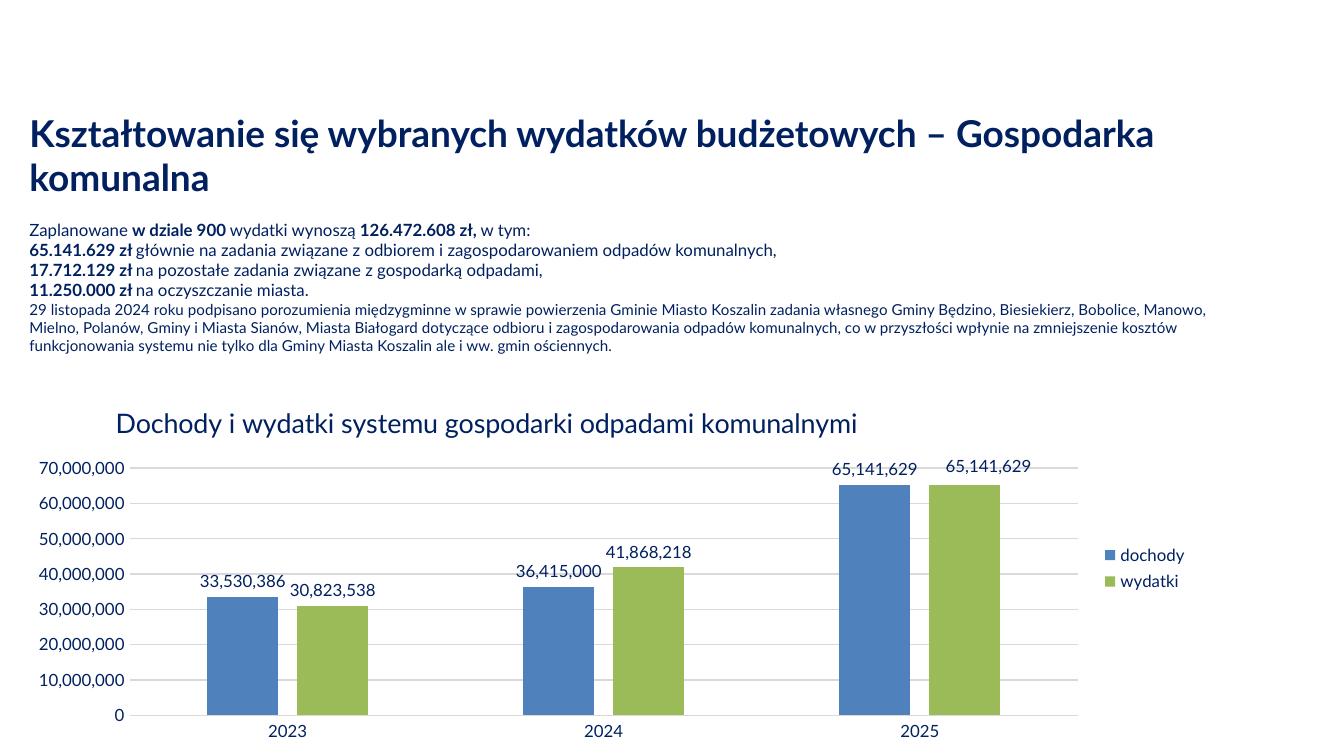
from lxml.etree import SubElement
from pptx import Presentation
from pptx.chart.data import CategoryChartData
from pptx.dml.color import RGBColor
from pptx.enum.chart import (XL_CHART_TYPE, XL_LABEL_POSITION,
                             XL_LEGEND_POSITION, XL_TICK_MARK)
from pptx.enum.text import MSO_ANCHOR, MSO_AUTO_SIZE, PP_ALIGN
from pptx.oxml import parse_xml
from pptx.oxml.ns import nsdecls, qn
from pptx.util import Pt

NAVY = RGBColor(0x00, 0x20, 0x60)
BLUE = RGBColor(0x4F, 0x81, 0xBD)
GREEN = RGBColor(0x9B, 0xBB, 0x59)
GREY = RGBColor(0xD9, 0xD9, 0xD9)

HEADING_SIZE, BODY_SIZE, NOTE_SIZE = 19.8, 9, 8.1

# Each paragraph: size, space before, runs of (text, bold)
PARAGRAPHS = [
    (HEADING_SIZE, 0, [("Kształtowanie się wybranych wydatków budżetowych – "
                        "Gospodarka komunalna", True)]),
    (BODY_SIZE, 10.8, [("Zaplanowane ", False), ("w dziale 900", True),
                       (" wydatki wynoszą", False),
                       (" 126.472.608 zł,", True), (" w tym:", False)]),
    (BODY_SIZE, 0, [("65.141.629 zł ", True),
                    ("głównie na zadania związane z odbiorem i "
                     "zagospodarowaniem odpadów komunalnych,", False)]),
    (BODY_SIZE, 0, [("17.712.129 zł ", True),
                    ("na pozostałe zadania związane z gospodarką odpadami,",
                     False)]),
    (BODY_SIZE, 0, [("11.250.000 zł ", True),
                    ("na oczyszczanie miasta.", False)]),
    (NOTE_SIZE, 0, [("29 listopada 2024 roku podpisano porozumienia "
                     "międzygminne w sprawie powierzenia Gminie Miasto "
                     "Koszalin zadania własnego Gminy Będzino, Biesiekierz, "
                     "Bobolice, Manowo, Mielno, Polanów, Gminy i Miasta "
                     "Sianów, Miasta Białogard dotyczące odbioru i "
                     "zagospodarowania odpadów komunalnych, co w przyszłości "
                     "wpłynie na zmniejszenie kosztów funkcjonowania systemu "
                     "nie tylko dla Gminy Miasta Koszalin ale i ww. gmin "
                     "ościennych.", False)]),
]

CHART_TITLE = "Dochody i wydatki systemu gospodarki odpadami komunalnymi"
YEARS = ["2023", "2024", "2025"]
SERIES = [
    ("dochody", BLUE, (33530386, 36415000, 65141629)),
    ("wydatki", GREEN, (30823538, 41868218, 65141629)),
]


def set_layout(parent, index, **values):
    """Give a chart part a manual layout, in fractions of the chart."""
    for old in parent.findall(qn("c:layout")):
        parent.remove(old)
    layout = parse_xml(f"<c:layout {nsdecls('c')}><c:manualLayout/></c:layout>")
    for name, value in values.items():
        SubElement(layout[0], qn(f"c:{name}"), val=str(value))
    parent.insert(index, layout)


class BudgetPage:
    def __init__(self, deck, font="Lato", color=NAVY):
        self.page = deck.slides.add_slide(deck.slide_layouts[5])
        self.font, self.color = font, color

    def style(self, font, size, bold=False):
        font.name, font.size, font.bold = self.font, Pt(size), bold
        font.color.rgb = self.color

    def title(self, left, top, width, height, paragraphs):
        box = self.page.shapes.title
        box.left, box.top = Pt(left), Pt(top)
        box.width, box.height = Pt(width), Pt(height)
        frame = box.text_frame
        frame.word_wrap = True
        frame.auto_size = MSO_AUTO_SIZE.NONE
        frame.vertical_anchor = MSO_ANCHOR.TOP
        for number, (size, before, spans) in enumerate(paragraphs):
            para = frame.add_paragraph() if number else frame.paragraphs[0]
            para.alignment = PP_ALIGN.LEFT
            para.space_before = Pt(before)
            for text, bold in spans:
                span = para.add_run()
                span.text = text
                self.style(span.font, size, bold)

    def column_chart(self, left, top, width, height, title, categories, series):
        data = CategoryChartData(number_format="#,##0")
        data.categories = categories
        for name, _, values in series:
            data.add_series(name, values)
        chart = self.page.shapes.add_chart(
            XL_CHART_TYPE.COLUMN_CLUSTERED, Pt(left), Pt(top),
            Pt(width), Pt(height), data).chart
        chart.font.name, chart.font.size = "Calibri", Pt(10)
        chart.font.color.rgb = self.color

        # Chart title and legend
        chart.has_title = True
        span = chart.chart_title.text_frame.paragraphs[0].add_run()
        span.text = title
        self.style(span.font, 14.4)
        chart.has_legend = True
        chart.legend.position = XL_LEGEND_POSITION.RIGHT
        chart.legend.include_in_layout = False
        self.style(chart.legend.font, 9)

        # Axes
        for axis in (chart.category_axis, chart.value_axis):
            axis.major_tick_mark = axis.minor_tick_mark = XL_TICK_MARK.NONE
            self.style(axis.tick_labels.font, 9)
        values_axis = chart.value_axis
        values_axis.minimum_scale, values_axis.maximum_scale = 0, 70000000
        values_axis.major_unit = 10000000
        values_axis.tick_labels.number_format = "#,##0"
        values_axis.tick_labels.number_format_is_linked = False
        values_axis.format.line.fill.background()
        for line in (chart.category_axis.format.line,
                     values_axis.major_gridlines.format.line):
            line.color.rgb, line.width = GREY, Pt(0.75)

        # Columns and their labels
        plot = chart.plots[0]
        plot.gap_width, plot.overlap = 219, -27
        plot.vary_by_categories = False
        for column, (_, color, _) in zip(plot.series, series):
            column.format.fill.solid()
            column.format.fill.fore_color.rgb = color
            labels = column.data_labels
            labels.show_value = True
            labels.number_format = "#,##0"
            labels.number_format_is_linked = False
            labels.position = XL_LABEL_POSITION.OUTSIDE_END
            self.style(labels.font, 9)

        # The last label stands aside from its neighbour
        last_label = plot.series[-1].points[len(categories) - 1].data_label
        self.style(last_label.font, 9)
        last_label.position = XL_LABEL_POSITION.OUTSIDE_END
        moved = chart.element.xpath(".//c:dLbls/c:dLbl")[0]
        set_layout(moved, 1, x=0.02, y=-0.01)

        # Places of title and plot
        set_layout(chart.element.xpath("c:chart/c:title")[0], 1,
                   xMode="edge", yMode="edge", x=0.08, y=0.03)
        set_layout(chart.element.xpath("c:chart/c:plotArea")[0], 0,
                   layoutTarget="inner", xMode="edge", yMode="edge",
                   x=0.096, y=0.222, w=0.8, h=0.686)


def main():
    deck = Presentation()
    deck.slide_width, deck.slide_height = Pt(720), Pt(405)
    page = BudgetPage(deck)
    page.title(8.5, 55.5, 657.5, 124.5, PARAGRAPHS)
    page.column_chart(8.5, 208, 635, 193, CHART_TITLE, YEARS, SERIES)
    deck.save("out.pptx")


if __name__ == "__main__":
    main()
